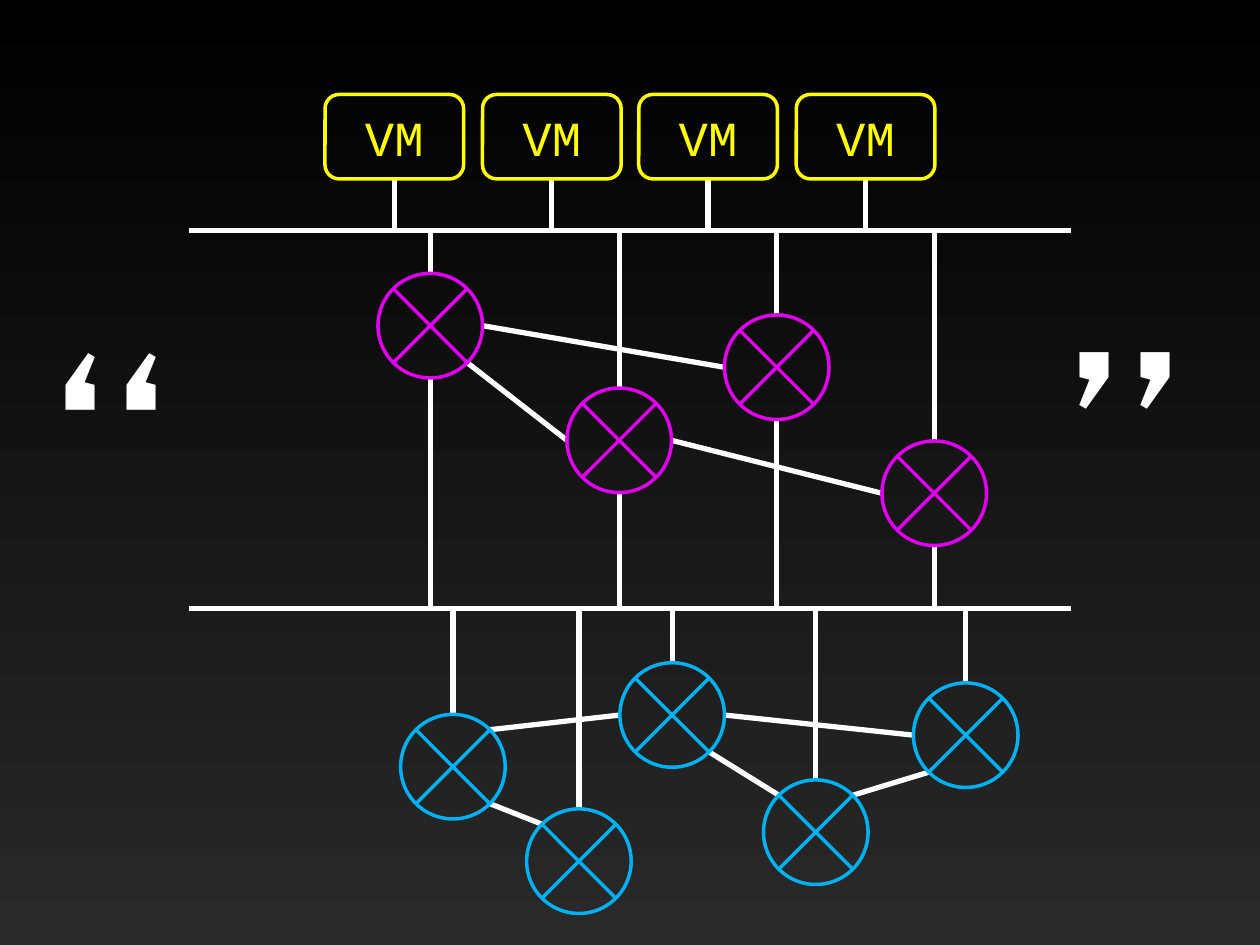
import math
from dataclasses import dataclass

import pptx
import pptx.dml.color
import pptx.enum.shapes
import pptx.enum.text
import pptx.oxml.ns
import pptx.util
from lxml import etree

Inches = pptx.util.Inches
Shapes = pptx.enum.shapes.MSO_SHAPE


@dataclass(frozen=True)
class Theme:
    top: str = "000000"
    bottom: str = "292929"
    wire: str = "FFFFFF"
    machine: str = "FFFF00"
    virtual: str = "E000F0"
    physical: str = "00B0F0"
    wire_width: float = 3
    outline_width: float = 2
    machine_font: str = "Courier New"
    machine_size: float = 28
    quote_font: str = "Cabin"
    quote_size: float = 166


THEME = Theme()
DIAMETER = 0.83
UPPER_BUS = 1.83
LOWER_BUS = 4.83
BUS_ENDS = (1.5, 8.5)
MACHINE_LEFT, MACHINE_TOP, MACHINE_STEP = 2.58, 0.75, 1.247
MACHINE_WIDTH, MACHINE_HEIGHT = 1.1, 0.67
MACHINE_COUNT = 4

VIRTUAL_ROUTERS = {
    "first": (3, 2.17),
    "second": (4.5, 3.08),
    "third": (5.75, 2.5),
    "fourth": (7, 3.5),
}
VIRTUAL_LINKS = [
    ("first", "SE", "second", "W"),
    ("first", "E", "third", "W"),
    ("second", "E", "fourth", "W"),
]
PHYSICAL_ROUTERS = {
    "first": (3.18, 5.67),
    "second": (4.18, 6.42),
    "third": (4.92, 5.26),
    "fourth": (6.06, 6.19),
    "fifth": (7.25, 5.42),
}
PHYSICAL_LINKS = [
    ("third", "W", "first", "NE"),
    ("first", "SE", "second", "NW"),
    ("third", "SE", "fourth", "NW"),
    ("fifth", "W", "third", "E"),
    ("fifth", "SW", "fourth", "NE"),
]
COMPASS = ["E", "SE", "S", "SW", "W", "NW", "N", "NE"]


def color(code):
    return pptx.dml.color.RGBColor.from_string(code)


def paint_background(page):
    fill = page.background.fill
    fill.gradient()
    fill.gradient_angle = 270
    for stop, position, code in zip(fill.gradient_stops, (0, 1), (THEME.top, THEME.bottom)):
        stop.position = position
        stop.color.rgb = color(code)


def add_wire(page, start, end):
    wire = page.shapes.add_connector(
        pptx.enum.shapes.MSO_CONNECTOR.STRAIGHT, *map(Inches, (*start, *end)))
    wire.line.color.rgb = color(THEME.wire)
    wire.line.width = pptx.util.Pt(THEME.wire_width)
    properties = wire._element.spPr
    etree.SubElement(properties, pptx.oxml.ns.qn("a:effectLst"))


def add_outline(page, kind, bounds, code):
    shape = page.shapes.add_shape(kind, *map(Inches, bounds))
    shape.shadow.inherit = False
    shape.fill.background()
    shape.line.color.rgb = color(code)
    shape.line.width = pptx.util.Pt(THEME.outline_width)
    return shape


def add_span(para, text, font, size, code):
    span = para.add_run()
    span.text = text
    span.font.name = font
    span.font.size = pptx.util.Pt(size)
    span.font.color.rgb = color(code)


def add_machine(page, left):
    center = left + MACHINE_WIDTH / 2
    add_wire(page, (center, MACHINE_TOP + MACHINE_HEIGHT), (center, UPPER_BUS))
    box = add_outline(page, Shapes.ROUNDED_RECTANGLE,
                      (left, MACHINE_TOP, MACHINE_WIDTH, MACHINE_HEIGHT), THEME.machine)
    box.text_frame.vertical_anchor = pptx.enum.text.MSO_ANCHOR.MIDDLE
    para = box.text_frame.paragraphs[0]
    para.alignment = pptx.enum.text.PP_ALIGN.CENTER
    add_span(para, "VM", THEME.machine_font, THEME.machine_size, THEME.machine)


def add_quote(page, text, left, top):
    box = page.shapes.add_textbox(*map(Inches, (left, top, 1.38, 2.89)))
    box.text_frame.word_wrap = False
    box.text_frame.auto_size = pptx.enum.text.MSO_AUTO_SIZE.SHAPE_TO_FIT_TEXT
    add_span(box.text_frame.paragraphs[0], text,
             THEME.quote_font, THEME.quote_size, THEME.wire)


def port(corner, direction):
    angle = COMPASS.index(direction) * math.pi / 4
    radius = DIAMETER / 2
    return (corner[0] + radius * (1 + math.cos(angle)),
            corner[1] + radius * (1 + math.sin(angle)))


def add_drops(page, routers, side, bus):
    for corner in routers.values():
        end = port(corner, side)
        add_wire(page, end, (end[0], bus))


def add_network(page, routers, links, code):
    for source, source_side, target, target_side in links:
        add_wire(page, port(routers[source], source_side), port(routers[target], target_side))
    for corner in routers.values():
        add_outline(page, Shapes.FLOWCHART_SUMMING_JUNCTION,
                    (*corner, DIAMETER, DIAMETER), code)


def main():
    deck = pptx.Presentation()
    deck.slide_width, deck.slide_height = Inches(10), Inches(7.5)
    page = deck.slides.add_slide(deck.slide_layouts[6])
    paint_background(page)
    for bus in (UPPER_BUS, LOWER_BUS):
        add_wire(page, (BUS_ENDS[0], bus), (BUS_ENDS[1], bus))
    add_drops(page, VIRTUAL_ROUTERS, "N", UPPER_BUS)
    add_drops(page, VIRTUAL_ROUTERS, "S", LOWER_BUS)
    add_drops(page, PHYSICAL_ROUTERS, "N", LOWER_BUS)
    for index in range(MACHINE_COUNT):
        add_machine(page, round(MACHINE_LEFT + index * MACHINE_STEP, 2))
    add_network(page, PHYSICAL_ROUTERS, PHYSICAL_LINKS, THEME.physical)
    add_network(page, VIRTUAL_ROUTERS, VIRTUAL_LINKS, THEME.virtual)
    add_quote(page, "“", 0.33, 2.18)
    add_quote(page, "”", 8.37, 2.17)
    deck.save("out.pptx")


if __name__ == "__main__":
    main()
